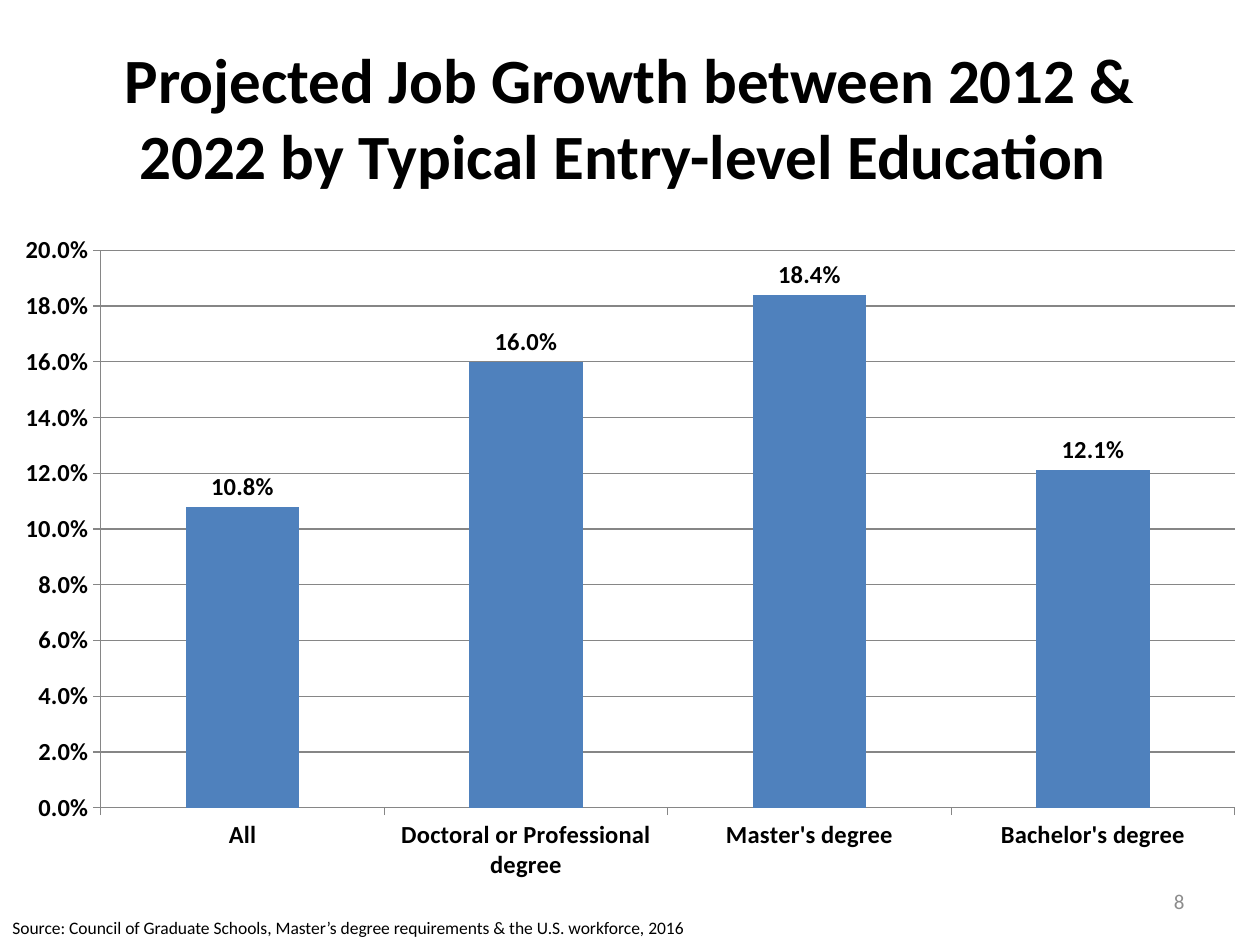
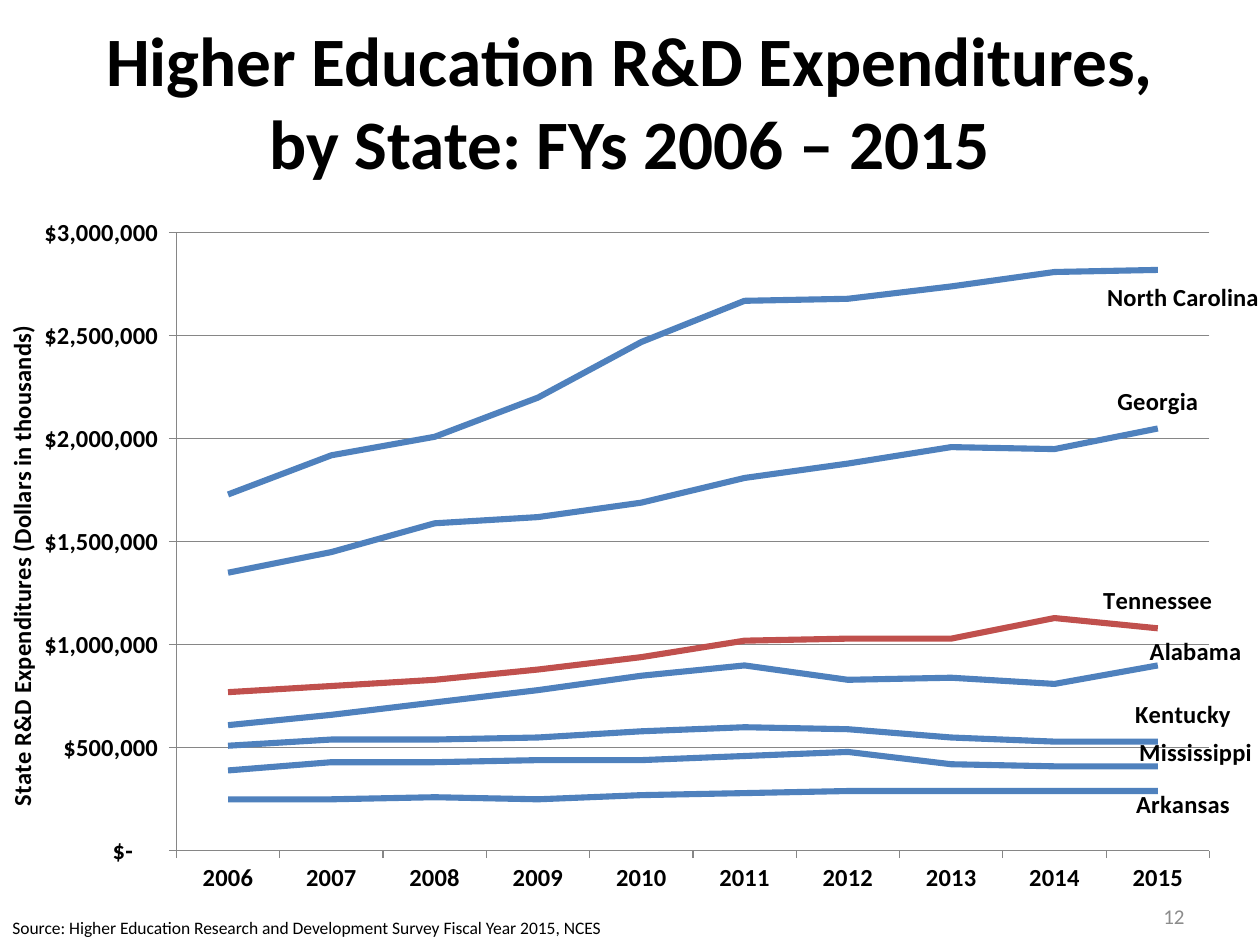
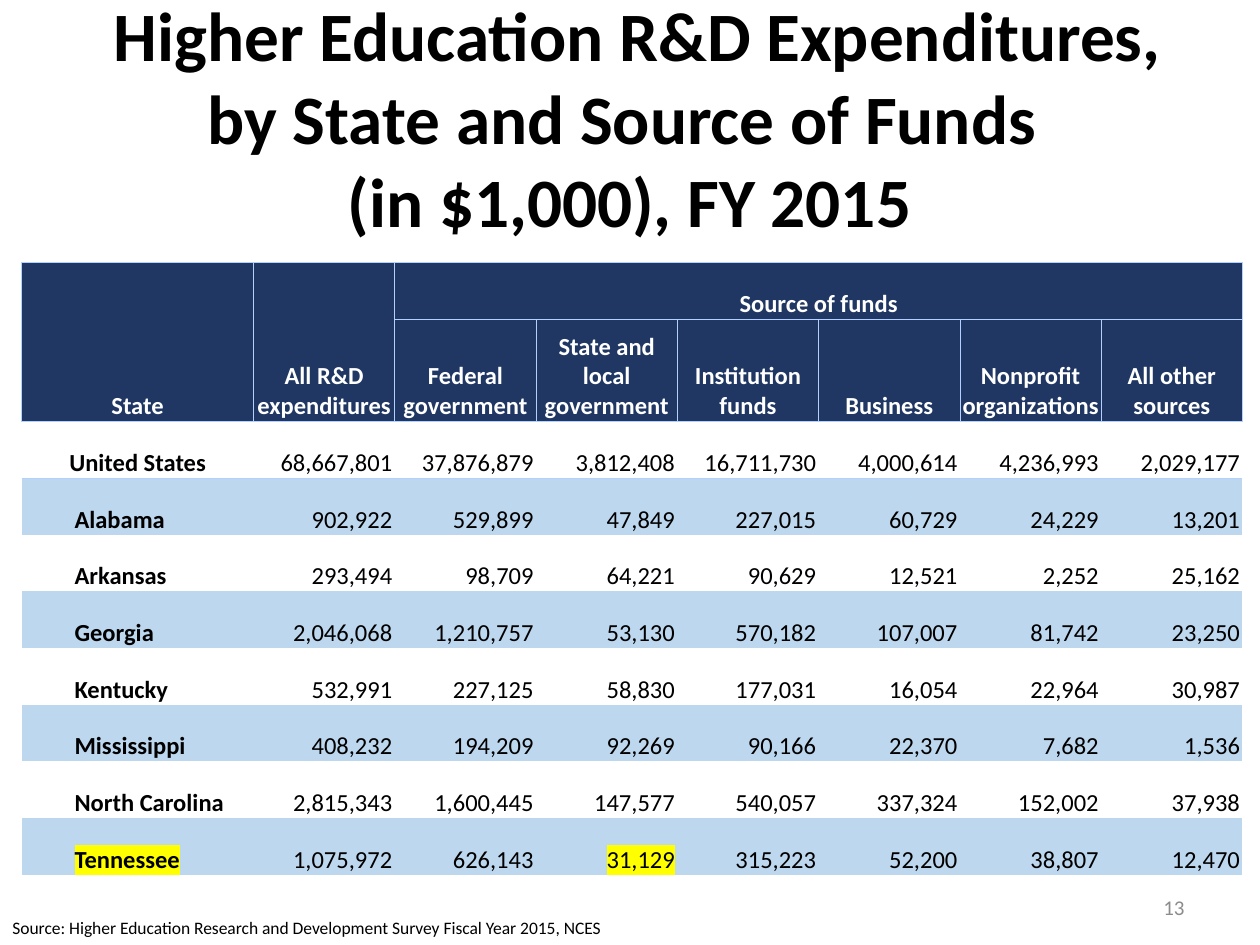
import dataclasses
import typing

import pptx
import pptx.chart.data
import pptx.dml.color
import pptx.enum.chart
import pptx.enum.text
import pptx.oxml
import pptx.oxml.ns
import pptx.util

Pt = pptx.util.Pt
Align = pptx.enum.text.PP_ALIGN
Anchor = pptx.enum.text.MSO_ANCHOR
Kind = pptx.enum.chart.XL_CHART_TYPE
Place = pptx.enum.chart.XL_LABEL_POSITION
Tick = pptx.enum.chart.XL_TICK_MARK


# Shared look
@dataclasses.dataclass(frozen=True)
class Theme:
    font: str = "Calibri"
    black: str = "000000"
    white: str = "FFFFFF"
    gray: str = "8C8C8C"
    grid: str = "868686"
    blue: str = "4F81BD"
    red: str = "C0504D"
    navy: str = "203764"
    band: str = "BDD7EE"
    rule: str = "B2D1FF"
    mark: str = "FFFF00"
    big: float = 39.6
    head: float = 36
    body: float = 14
    page: float = 12
    note: float = 10


THEME = Theme()


class Box(typing.NamedTuple):
    left: float
    top: float
    width: float
    height: float

    def pts(self) -> list:
        return [Pt(side) for side in self]


@dataclasses.dataclass(frozen=True)
class Frame:
    title: str
    size: float
    top: float
    source: str
    wide: float
    page: str
    low: float


@dataclasses.dataclass(frozen=True)
class State:
    name: str
    vals: tuple  # tens of millions of dollars
    shift: tuple  # label offset, as a share of the chart
    color: str = THEME.blue


# Text and XML helpers
def color(code: str) -> pptx.dml.color.RGBColor:
    return pptx.dml.color.RGBColor.from_string(code)


def style(font, size: float, code: str = THEME.black, bold: bool = False) -> None:
    font.name, font.size, font.bold = THEME.font, Pt(size), bold
    font.color.rgb = color(code)


def write(frame, text: str, size: float, code: str = THEME.black,
          bold: bool = False, align=Align.LEFT) -> None:
    para = frame.paragraphs[0]
    para.text = text
    para.alignment = align
    for run in para.runs:
        style(run.font, size, code, bold)


def make(tag: str, inner: str, prefix: str):
    space = pptx.oxml.ns.nsdecls(prefix)
    return pptx.oxml.parse_xml(f"<{prefix}:{tag} {space}>{inner}</{prefix}:{tag}>")


def layout(edge: bool = False, inner: bool = False, **sides: float):
    parts = '<c:layoutTarget val="inner"/>' if inner else ""
    if edge:
        parts += '<c:xMode val="edge"/><c:yMode val="edge"/>'
    parts += "".join(f'<c:{key} val="{val}"/>' for key, val in sides.items())
    return make("layout", f"<c:manualLayout>{parts}</c:manualLayout>", "c")


def swap(parent, node, spot: int) -> None:
    for old in parent.findall(pptx.oxml.ns.qn("c:layout")):
        parent.remove(old)
    parent.insert(spot, node)


def text_box(slide, box: Box):
    return slide.shapes.add_textbox(*box.pts()).text_frame


# Title, source line and page number
def add_slide(deck, frame: Frame):
    slide = deck.slides.add_slide(deck.slide_layouts[6])
    title = text_box(slide, Box(36, frame.top, 648, 90))
    title.word_wrap, title.vertical_anchor = True, Anchor.MIDDLE
    write(title, frame.title, frame.size, bold=True, align=Align.CENTER)

    source = text_box(slide, Box(0, 520.5, frame.wide, 19.4))
    source.word_wrap = False
    source.auto_size = pptx.enum.text.MSO_AUTO_SIZE.SHAPE_TO_FIT_TEXT
    write(source, frame.source, THEME.note)

    page = text_box(slide, Box(516, frame.low, 168, 28.8))
    page.word_wrap, page.vertical_anchor = True, Anchor.MIDDLE
    write(page, frame.page, THEME.page, THEME.gray, align=Align.RIGHT)
    return slide


# Charts
def add_chart(slide, kind, box: Box, data, plot: Box, top: float,
              step: float, form: str):
    chart = slide.shapes.add_chart(kind, *box.pts(), data).chart
    chart.has_legend = chart.has_title = False
    style(chart.font, THEME.note)
    chart.plots[0].vary_by_categories = False
    for axis in (chart.category_axis, chart.value_axis):
        style(axis.tick_labels.font, THEME.body, bold=True)
        axis.major_tick_mark, axis.minor_tick_mark = Tick.OUTSIDE, Tick.NONE
        axis.format.line.color.rgb = color(THEME.grid)
        axis.format.line.width = Pt(0.75)
    axis = chart.value_axis
    axis.minimum_scale, axis.maximum_scale, axis.major_unit = 0, top, step
    axis.has_major_gridlines = True
    axis.major_gridlines.format.line.color.rgb = color(THEME.grid)
    axis.major_gridlines.format.line.width = Pt(0.75)
    axis.tick_labels.number_format = form
    axis.tick_labels.number_format_is_linked = False
    area = chart._chartSpace.chart.plotArea
    swap(area, layout(True, True, x=plot.left, y=plot.top, w=plot.width,
                      h=plot.height), 0)
    return chart


def add_jobs(slide) -> None:
    form = "0.0%"
    data = pptx.chart.data.CategoryChartData(number_format=form)
    data.categories = ["All", "Doctoral or Professional degree",
                       "Master's degree", "Bachelor's degree"]
    data.add_series("Series 1", (0.108, 0.16, 0.184, 0.121))
    chart = add_chart(slide, Kind.COLUMN_CLUSTERED, Box(0, 127.7, 720, 383.8),
                      data, Box(0.08, 0.04, 0.9, 0.83), 0.2, 0.02, form)
    plot = chart.plots[0]
    plot.gap_width = 150
    bars = plot.series[0]
    bars.format.fill.solid()
    bars.format.fill.fore_color.rgb = color(THEME.blue)
    labels = bars.data_labels
    labels.show_value, labels.position = True, Place.OUTSIDE_END
    labels.number_format, labels.number_format_is_linked = form, False
    style(labels.font, THEME.body, bold=True)


STATES = (
    State("Alabama", (61, 66, 72, 78, 85, 90, 83, 84, 81, 90), (0.03, 0.01)),
    State("Arkansas", (25, 25, 26, 25, 27, 28, 29, 29, 29, 29), (0.02, 0.05)),
    State("Georgia", (135, 145, 159, 162, 169, 181, 188, 196, 195, 205),
          (0, -0.01)),
    State("Kentucky", (51, 54, 54, 55, 58, 60, 59, 55, 53, 53), (0.02, -0.01)),
    State("Mississippi", (39, 43, 43, 44, 44, 46, 48, 42, 41, 41), (0.03, 0.01)),
    State("North Carolina", (173, 192, 201, 220, 247, 267, 268, 274, 281, 282),
          (0.02, 0.07)),
    State("Tennessee", (77, 80, 83, 88, 94, 102, 103, 103, 113, 108),
          (0, -0.01), THEME.red),
)


def tag_end(line, state: State) -> None:
    line.data_labels.show_value = False
    label = line.points[len(state.vals) - 1].data_label
    style(label.font, THEME.body, bold=True)
    label.position = Place.ABOVE
    node = label._dLbl
    for key, val in (("showSerName", "1"), ("showVal", "0")):
        node.find(pptx.oxml.ns.qn(f"c:{key}")).set("val", val)
    swap(node, layout(x=state.shift[0], y=state.shift[1]), 1)


def add_trend(slide) -> None:
    data = pptx.chart.data.CategoryChartData()
    data.categories = [str(year) for year in range(2006, 2016)]
    for state in STATES:
        data.add_series(state.name, [val * 10000 for val in state.vals])
    form = '_("$"* #,##0_);_("$"* \\(#,##0\\);_("$"* "-"??_);_(@_)'
    chart = add_chart(slide, Kind.LINE, Box(0, 117.4, 720, 393.1), data,
                      Box(0.14, 0.04, 0.82, 0.9), 3000000, 500000, form)
    title = chart.value_axis.axis_title
    write(title.text_frame, "State R&D Expenditures (Dollars in thousands)",
          THEME.body, bold=True, align=Align.CENTER)
    turn = title.text_frame._txBody.bodyPr
    turn.set("rot", "-5400000")
    turn.set("vert", "horz")
    swap(title._element, layout(True, x=0, y=0.17), 1)
    for line, state in zip(chart.plots[0].series, STATES):
        line.smooth = False
        line.marker.style = pptx.enum.chart.XL_MARKER_STYLE.NONE
        line.format.line.color.rgb = color(state.color)
        line.format.line.width = Pt(3.5)
        tag_end(line, state)


# Table of funds
HEADS = ("State", "All R&D expenditures", "Federal government",
         "State and local government", "Institution funds", "Business",
         "Nonprofit organizations", "All other sources")
FUNDS = (
    ("United States", "68,667,801", "37,876,879", "3,812,408", "16,711,730",
     "4,000,614", "4,236,993", "2,029,177"),
    ("Alabama", "902,922", "529,899", "47,849", "227,015", "60,729", "24,229",
     "13,201"),
    ("Arkansas", "293,494", "98,709", "64,221", "90,629", "12,521", "2,252",
     "25,162"),
    ("Georgia", "2,046,068", "1,210,757", "53,130", "570,182", "107,007",
     "81,742", "23,250"),
    ("Kentucky", "532,991", "227,125", "58,830", "177,031", "16,054", "22,964",
     "30,987"),
    ("Mississippi", "408,232", "194,209", "92,269", "90,166", "22,370", "7,682",
     "1,536"),
    ("North Carolina", "2,815,343", "1,600,445", "147,577", "540,057",
     "337,324", "152,002", "37,938"),
    ("Tennessee", "1,075,972", "626,143", "31,129", "315,223", "52,200",
     "38,807", "12,470"),
)
MARKED = ("Tennessee", "31,129")
NO_STYLE = "{2D5ABB26-0587-4C30-8999-92F81FD0307C}"


def fill_in(code: str) -> str:
    return f'<a:solidFill><a:srgbClr val="{code}"/></a:solidFill>'


def edge(cell, sides: str) -> None:
    props = cell._tc.get_or_add_tcPr()
    for spot, side in enumerate(sides):
        line = make(f"ln{side}", fill_in(THEME.rule), "a")
        line.set("w", str(Pt(0.5)))
        props.insert(spot, line)


def set_cell(cell, text: str, back: str = "", code: str = THEME.black,
             bold: bool = False, align=Align.CENTER, left: float = 1.4) -> None:
    cell.margin_left, cell.margin_right = Pt(left), Pt(1.4)
    cell.margin_top, cell.margin_bottom = Pt(1.4), 0
    cell.vertical_anchor = Anchor.BOTTOM
    if back:
        cell.fill.solid()
        cell.fill.fore_color.rgb = color(back)
    else:
        cell.fill.background()
    write(cell.text_frame, text, THEME.body, code, bold, align)
    if text in MARKED:
        props = cell.text_frame.paragraphs[0].runs[0].font._element
        glow = make("highlight", f'<a:srgbClr val="{THEME.mark}"/>', "a")
        props.find(pptx.oxml.ns.qn("a:solidFill")).addnext(glow)


def add_funds(slide) -> None:
    count = len(HEADS)
    table = slide.shapes.add_table(len(FUNDS) + 2, count,
                                   *Box(12.4, 150, 697.75, 350).pts()).table
    table.first_row = table.horz_banding = False
    table._tbl.tblPr.find(pptx.oxml.ns.qn("a:tableStyleId")).text = NO_STYLE
    for col, item in enumerate(table.columns):
        item.width = Pt(80.75 if col else 132.5)
    for row, item in enumerate(table.rows):
        item.height = Pt(58.3 if row == 1 else 32.4)

    # Header rows
    tops = HEADS[:2] + ("Source of funds",) + ("",) * (count - 3)
    lows = ("", "") + HEADS[2:]
    for row, names in enumerate((tops, lows)):
        for col, name in enumerate(names):
            cell = table.cell(row, col)
            set_cell(cell, name, THEME.navy, THEME.white, True)
            edge(cell, "LRTB")
    for col in range(2):
        table.cell(0, col).merge(table.cell(1, col))
    table.cell(0, 2).merge(table.cell(0, count - 1))

    # State rows
    for row, (name, *vals) in enumerate(FUNDS):
        back = THEME.band if row % 2 else ""
        first = table.cell(row + 2, 0)
        if row:
            set_cell(first, name, back, bold=True, align=Align.LEFT, left=30.2)
        else:
            set_cell(first, name, back, bold=True)
        for col, val in enumerate(vals, 1):
            set_cell(table.cell(row + 2, col), val, back, align=Align.RIGHT)
    for col in range(count):
        edge(table.cell(2, col), "T")


# Slides
SURVEY = ("Source: Higher Education Research and Development Survey "
          "Fiscal Year 2015, NCES")
SLIDES = (
    (Frame("Projected Job Growth between 2012 & 2022 by Typical "
           "Entry-level Education ", THEME.head, 21.6,
           "Source: Council of Graduate Schools, Master’s degree requirements "
           "& the U.S. workforce, 2016", 407.5, "8", 500.4), add_jobs),
    (Frame("Higher Education R&D Expenditures, by State: FYs 2006 – 2015",
           THEME.big, 12.2, SURVEY, 360, "12", 509), add_trend),
    (Frame(" Higher Education R&D Expenditures, by State and Source of Funds "
           "\v(in $1,000), FY 2015", THEME.big, 21.6, SURVEY, 360, "13", 504),
     add_funds),
)


def main() -> None:
    deck = pptx.Presentation()
    deck.slide_width, deck.slide_height = Pt(720), Pt(540)
    for frame, draw in SLIDES:
        draw(add_slide(deck, frame))
    deck.save("out.pptx")


if __name__ == "__main__":
    main()
